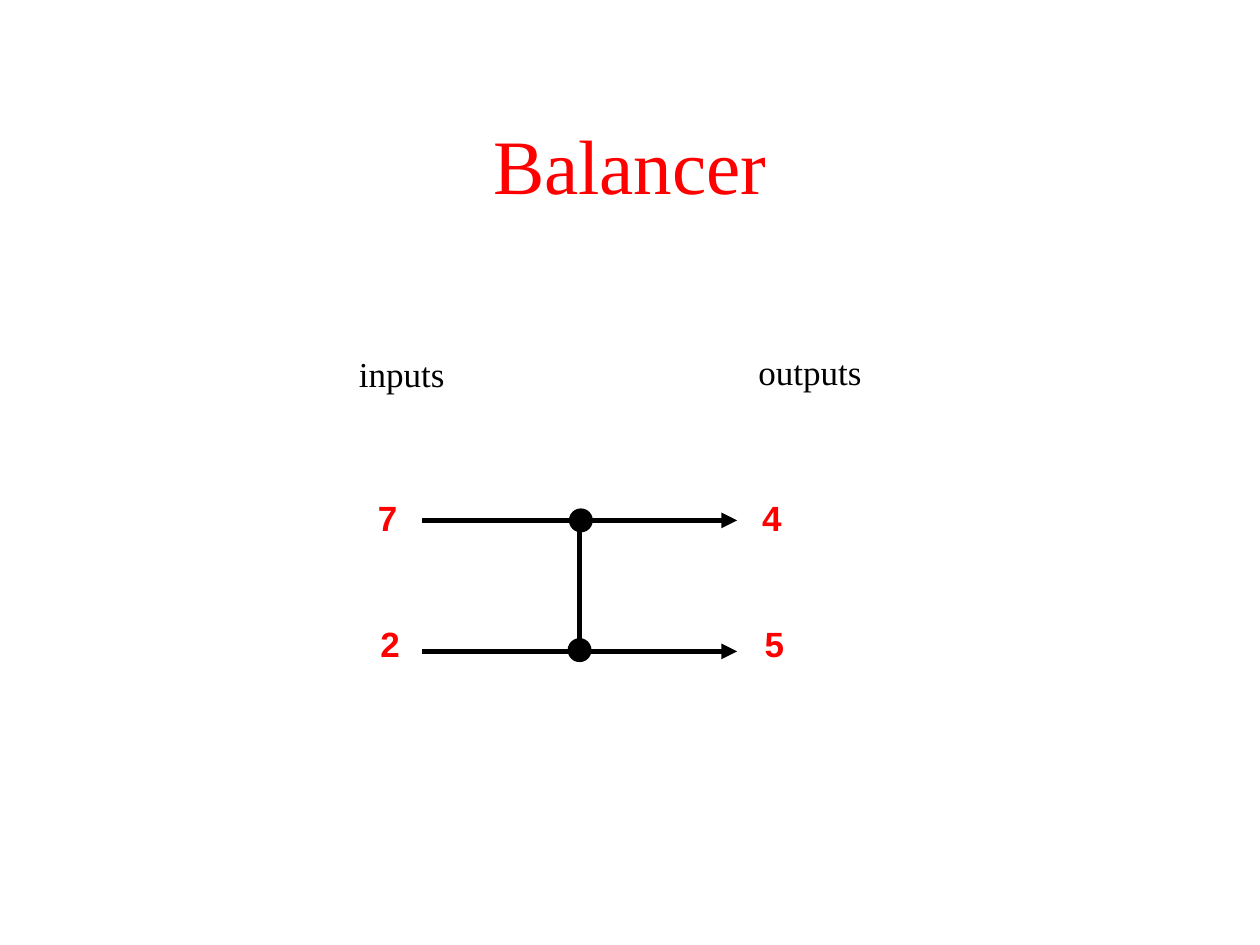
from lxml.etree import SubElement
from pptx import Presentation
from pptx.dml.color import RGBColor
from pptx.enum.shapes import MSO_CONNECTOR, MSO_SHAPE
from pptx.enum.text import MSO_ANCHOR, MSO_AUTO_SIZE, PP_ALIGN
from pptx.oxml.ns import qn
from pptx.util import Inches, Pt

RED, BLACK = "FF0000", "000000"
SERIF, SANS = "Times New Roman", "Arial"


def color(hex_value):
    return RGBColor.from_string(hex_value)


class SlideBuilder:
    title_format = {"name": SERIF, "size": Pt(44), "bold": False}
    label_format = {"name": SERIF, "size": Pt(20), "bold": False}
    value_format = {"name": SANS, "size": Pt(20), "bold": True}
    wire_width = Pt(3)
    dot_size = 0.18

    def __init__(self, slide):
        self.slide = slide

    def text(self, content, left, top, width, height, font_format, hex_value):
        shape = self.slide.shapes.add_textbox(
            Inches(left), Inches(top), Inches(width), Inches(height))
        frame = shape.text_frame
        frame.word_wrap = False
        frame.auto_size = MSO_AUTO_SIZE.SHAPE_TO_FIT_TEXT
        paragraph = frame.paragraphs[0]
        run = paragraph.add_run()
        run.text = content
        for name, value in font_format.items():
            setattr(run.font, name, value)
        run.font.color.rgb = color(hex_value)
        return shape

    def title(self, content, left, top, width, height):
        shape = self.text(content, left, top, width, height, self.title_format, RED)
        frame = shape.text_frame
        frame.auto_size = MSO_AUTO_SIZE.NONE
        frame.word_wrap = True
        frame.vertical_anchor = MSO_ANCHOR.MIDDLE
        frame.paragraphs[0].alignment = PP_ALIGN.CENTER

    def wire(self, start, end, arrow=False):
        connector = self.slide.shapes.add_connector(
            MSO_CONNECTOR.STRAIGHT, *(Inches(value) for value in (*start, *end)))
        connector.line.color.rgb = color(BLACK)
        connector.line.width = self.wire_width
        if arrow:
            SubElement(connector.line._get_or_add_ln(), qn("a:tailEnd"), type="triangle")
        SubElement(connector._element.spPr, qn("a:effectLst"))

    def dot(self, left, top):
        size = Inches(self.dot_size)
        shape = self.slide.shapes.add_shape(
            MSO_SHAPE.OVAL, Inches(left), Inches(top), size, size)
        shape.shadow.inherit = False
        shape.fill.solid()
        shape.fill.fore_color.rgb = color(BLACK)
        shape.line.color.rgb = color(BLACK)
        shape.line.width = Pt(0.75)


def main():
    presentation = Presentation()
    presentation.slide_width, presentation.slide_height = Inches(10), Inches(7.5)
    builder = SlideBuilder(presentation.slides.add_slide(presentation.slide_layouts[6]))

    # Title
    builder.title("Balancer", 0.75, 0.67, 8.5, 1.25)

    # Balancer: a vertical bar joining two wires
    builder.wire((4.6, 4.12), (4.6, 5.18))
    for wire_top, dot_left, dot_top in ((5.17, 4.51, 5.07), (4.13, 4.52, 4.04)):
        builder.dot(dot_left, dot_top)
        builder.wire((3.35, wire_top), (5.85, wire_top), arrow=True)

    # Column labels
    builder.text("inputs", 2.75, 2.75, 0.88, 0.43, builder.label_format, BLACK)
    builder.text("outputs", 5.92, 2.73, 1.02, 0.43, builder.label_format, BLACK)

    # Input and output counts, one row for each wire
    rows = ((3.89, 0, "7", "4"), (4.89, 0.02, "2", "5"))
    for top, shift, *counts in rows:
        for left, count in zip((2.9, 5.95), counts):
            builder.text(count, left + shift, top, 0.36, 0.43,
                         builder.value_format, RED)

    presentation.save("out.pptx")


if __name__ == "__main__":
    main()
